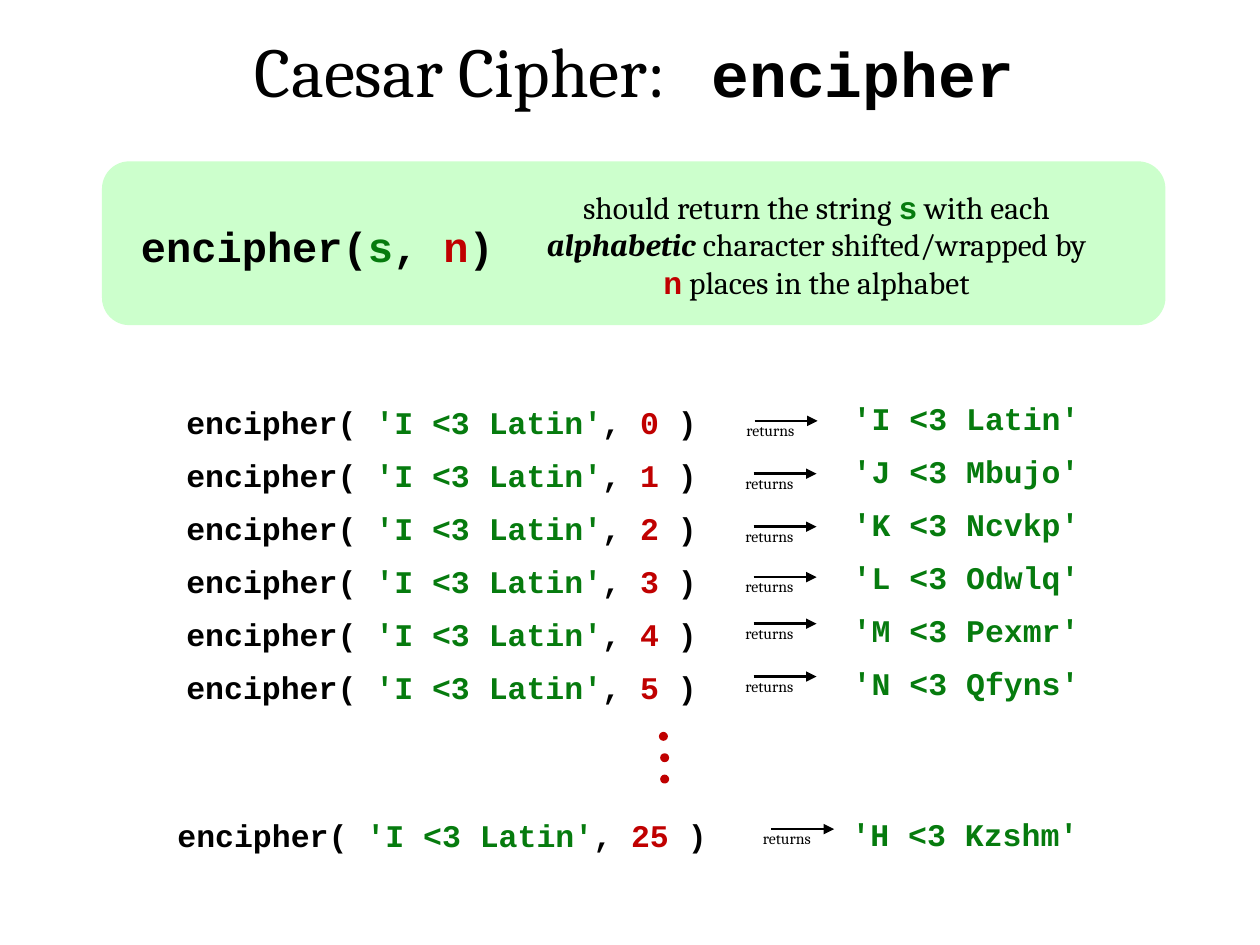
from lxml.etree import SubElement
from pptx import Presentation
from pptx.dml.color import RGBColor
from pptx.enum.shapes import MSO_CONNECTOR, MSO_SHAPE
from pptx.enum.text import PP_ALIGN
from pptx.oxml.ns import qn
from pptx.util import Pt

BLACK, GREEN, RED, MINT = "000000", "067B0E", "C00000", "CCFFCC"
SERIF, MONO = "Cambria", "Courier New"


def rgb(value):
    return RGBColor.from_string(value)


def add_text(x, y, w, h, size, lines, align=PP_ALIGN.LEFT, spacing=None):
    tf = s.shapes.add_textbox(Pt(x), Pt(y), Pt(w), Pt(h)).text_frame
    tf.word_wrap = True
    for i, line in enumerate(lines):
        p = tf.add_paragraph() if i else tf.paragraphs[0]
        p.alignment = align
        p.line_spacing = spacing
        for text, font, color in line:
            r = p.add_run()
            r.text = text
            r.font.size = Pt(size)
            r.font.name = font
            r.font.bold = font == MONO
            r.font.color.rgb = rgb(color)
    return tf


prs = Presentation()
prs.slide_width, prs.slide_height = Pt(720), Pt(540)
s = prs.slides.add_slide(prs.slide_layouts[6])

tf = add_text(77.8, 12.2, 569.5, 55.4, 40,
              [[("Caesar Cipher:   ", SERIF, BLACK), ("encipher", MONO, BLACK)]],
              PP_ALIGN.CENTER)
tf.paragraphs[0].runs[1].font.size = Pt(36)

calls = [(99.4, 227 + 30.2 * n, n) for n in range(6)] + [(94.3, 463, 25)]
for x, y, n in calls:
    add_text(x, y, 360, 29, 18, [[
        ("encipher( ", MONO, BLACK), ("'I <3 Latin'", MONO, GREEN),
        (", ", MONO, BLACK), (str(n), MONO, RED), (" )", MONO, BLACK)]])

arrows = [(431.2, 240.5), (430.6, 270.7), (430.6, 301), (430.6, 329.8),
          (430.6, 356.4), (430.6, 386.6), (440.6, 473.8)]
for x, y in arrows:
    sp = s.shapes.add_connector(MSO_CONNECTOR.STRAIGHT, Pt(x), Pt(y), Pt(x + 36), Pt(y))
    sp.line.color.rgb = rgb(BLACK)
    sp.line.width = Pt(1.5)
    SubElement(sp.line._get_or_add_ln(), qn("a:tailEnd"), type="triangle")
    SubElement(sp._element.spPr, qn("a:effectLst"))
    add_text(x - 15.1, y - 3.6, 48.2, 18, 9, [[("returns", SERIF, BLACK)]], PP_ALIGN.CENTER)

results = ["'I <3 Latin'", "'J <3 Mbujo'", "'K <3 Ncvkp'",
           "'L <3 Odwlq'", "'M <3 Pexmr'", "'N <3 Qfyns'"]
add_text(480.2, 216, 185.8, 190.8, 18, [[(t, MONO, GREEN)] for t in results], spacing=1.4)
add_text(479.5, 462.2, 146, 29, 18, [[("'H <3 Kzshm'", MONO, GREEN)]])

for x, y in [(377.3, 419), (378, 431.2), (378, 443.4)]:
    sp = s.shapes.add_shape(MSO_SHAPE.OVAL, Pt(x), Pt(y), Pt(3.6), Pt(3.6))
    sp.shadow.inherit = False
    sp.fill.solid()
    sp.fill.fore_color.rgb = rgb(RED)
    sp.line.color.rgb = rgb(RED)
    sp.line.width = Pt(1.5)

sp = s.shapes.add_shape(MSO_SHAPE.ROUNDED_RECTANGLE, Pt(58.3), Pt(92.2), Pt(607.7), Pt(93.6))
sp.shadow.inherit = False
sp.fill.solid()
sp.fill.fore_color.rgb = rgb(MINT)
sp.line.fill.background()

add_text(73.4, 122.4, 216, 36.7, 24, [[
    ("encipher(", MONO, BLACK), ("s", MONO, GREEN), (", ", MONO, BLACK),
    ("n", MONO, RED), (")", MONO, BLACK)]], PP_ALIGN.CENTER)
tf = add_text(304.6, 103.7, 324, 72.7, 18, [[
    ("should return the string ", SERIF, BLACK), ("s", MONO, GREEN),
    (" with each ", SERIF, BLACK), ("alphabetic ", SERIF, BLACK),
    ("character shifted/wrapped by ", SERIF, BLACK), ("n", MONO, RED),
    (" places in the alphabet", SERIF, BLACK)]], PP_ALIGN.CENTER)
r = tf.paragraphs[0].runs[3]
r.font.bold = r.font.italic = True

prs.save("out.pptx")
